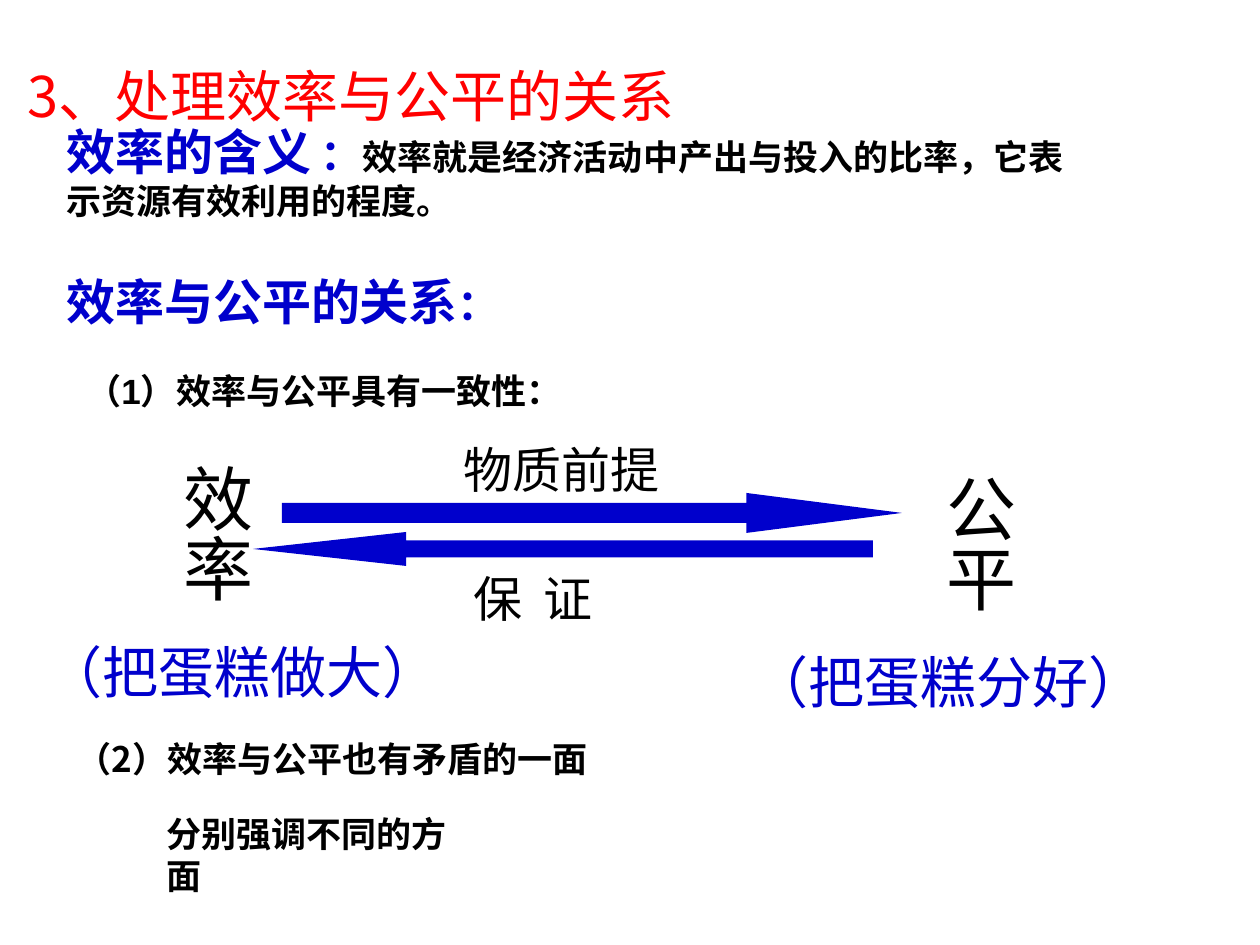
from lxml import etree
from pptx import Presentation
from pptx import util as u
from pptx.dml.color import RGBColor
from pptx.enum import shapes, text
from pptx.oxml import ns

RED = RGBColor(0xFF, 0x00, 0x00)
BLUE = RGBColor(0x00, 0x00, 0xCC)
BLACK = RGBColor(0x00, 0x00, 0x00)
CJK = "Noto Sans CJK SC"
LATIN = "Arial"


def px(*lengths):
    return [u.Emu(round(length * 914400 / 126)) for length in lengths]


def add_text(slide, place, spans, vertical=False):
    box = slide.shapes.add_textbox(*px(*place))
    frame = box.text_frame
    frame.word_wrap = True
    if vertical:
        frame._txBody.bodyPr.set("vert", "eaVert")
    para = frame.paragraphs[0]
    for words, size, color, bold, face, spacing in spans:
        span = para.add_run()
        span.text = words
        span.font.color.rgb = color
        for key, value in {"size": u.Pt(size), "bold": bold, "name": face}.items():
            setattr(span.font, key, value)
        properties = span._r.get_or_add_rPr()
        etree.SubElement(properties, ns.qn("a:ea"), typeface=CJK)
        if spacing:
            properties.set("spc", str(spacing))
    return para


deck = Presentation()
deck.slide_width, deck.slide_height = px(1260, 945)
page = deck.slides.add_slide(deck.slide_layouts[6])

arrows = [
    (shapes.MSO_SHAPE.RIGHT_ARROW, (282, 493, 620, 40), 3.89),
    (shapes.MSO_SHAPE.LEFT_ARROW, (253, 532, 620, 34), 4.51),
]
for kind, place, head in arrows:
    arrow = page.shapes.add_shape(kind, *px(*place))
    arrow.shadow.inherit = False
    arrow.fill.solid()
    arrow.fill.fore_color.rgb = BLUE
    arrow.line.fill.background()
    arrow.adjustments[0] = 0.5
    arrow.adjustments[1] = head

labels = [
    ("3、处理效率与公平的关系", (15, 55, 1106, 79), 32, RED, False, CJK),
    ("物质前提", (451, 433, 262, 72), 28, BLACK, False, CJK),
    ("（2）效率与公平也有矛盾的一面", (64, 731, 863, 117), 20, BLACK, True, CJK),
    ("（把蛋糕做大）", (34, 631, 476, 79), 32, BLUE, False, CJK),
    ("（把蛋糕分好）", (740, 641, 451, 79), 32, BLUE, False, CJK),
    ("（1）效率与公平具有一致性：", (74, 363, 500, 54), 20, BLACK, True, LATIN),
    ("分别强调不同的方面", (154, 806, 340, 54), 20, BLACK, True, LATIN),
]
for words, place, size, color, bold, face in labels:
    add_text(page, place, [(words, size, color, bold, face, 0)])

for words, place in [("效率", (154, 452, 110, 189)), ("公平", (917, 462, 110, 189))]:
    add_text(page, place, [(words, 40, BLACK, False, CJK, 0)], vertical=True)

add_text(page, (461, 562, 208, 72), [
    ("保", 28, BLACK, False, CJK, 0),
    (" ", 28, BLACK, False, CJK, 600),
    ("证", 28, BLACK, False, CJK, 0),
])

add_text(page, (54, 115, 1042, 113), [
    ("效率的含义", 28, BLUE, True, CJK, 0),
    (" ：", 24, BLUE, True, LATIN, 0),
    ("效率就是经济活动中产出与投入的比率，它表示资源有效利用的程度。", 20, BLACK, True, LATIN, 0),
])

relation = add_text(page, (54, 265, 1052, 79), [
    ("效率与公平的关系", 28, BLUE, True, CJK, 0),
    ("：", 24, BLUE, True, CJK, 0),
])
relation.alignment = text.PP_ALIGN.JUSTIFY

deck.save("out.pptx")
